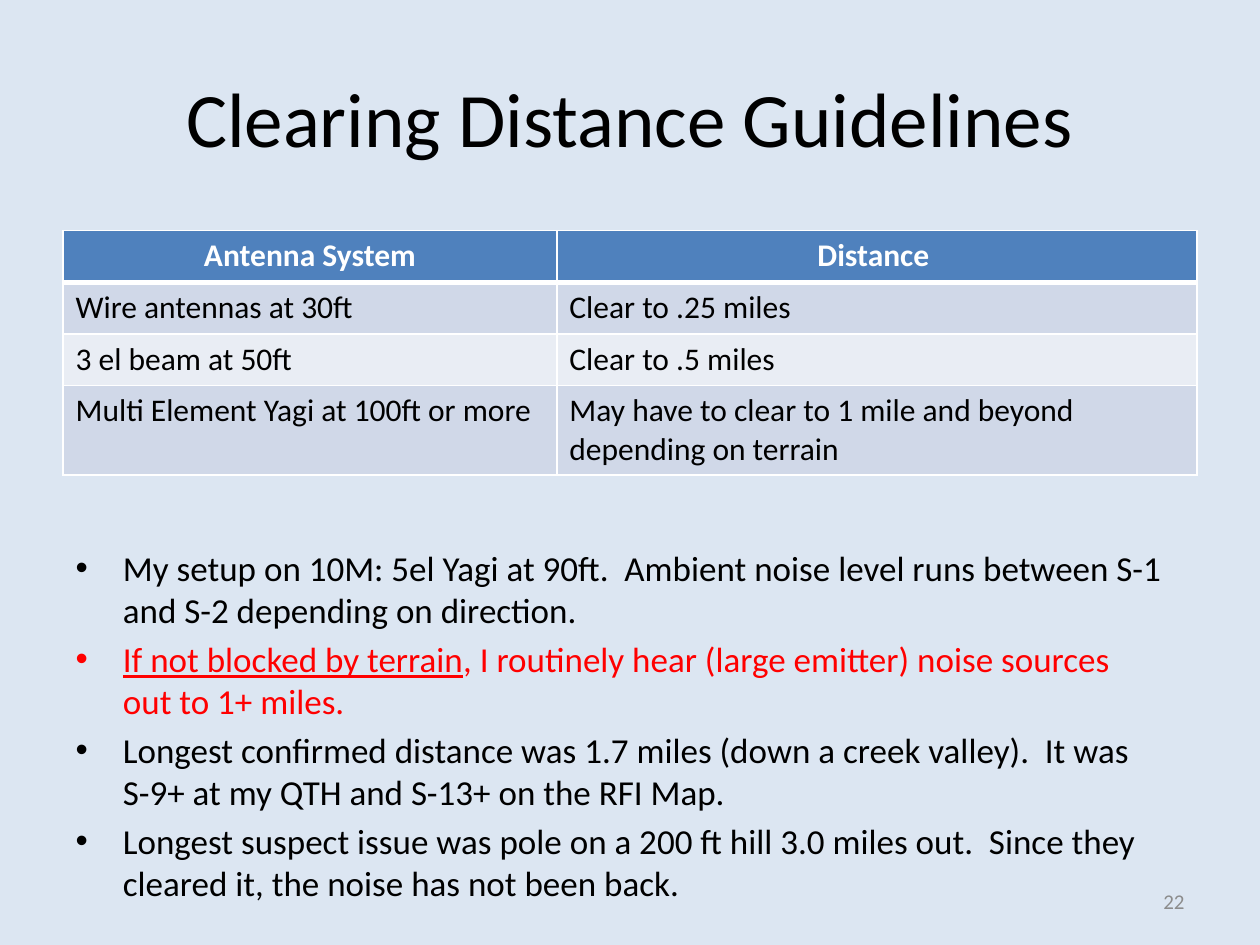
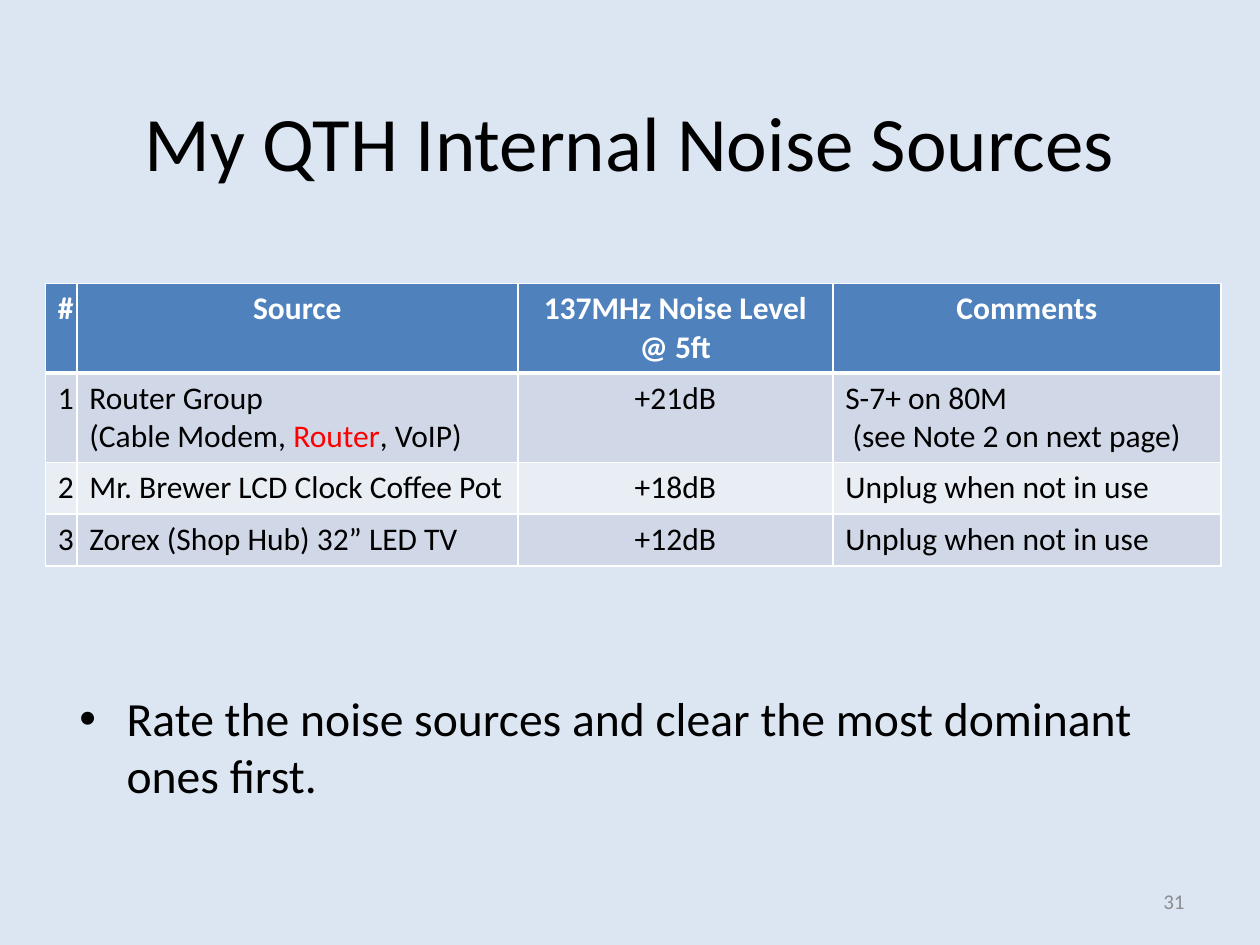
"""Build two slides on antenna noise: distance guidelines and home noise sources."""
from typing import Any, NamedTuple, Union

from lxml.etree import SubElement
from pptx import Presentation
from pptx.dml.color import RGBColor
from pptx.enum.text import MSO_ANCHOR, MSO_AUTO_SIZE, PP_ALIGN
from pptx.oxml.ns import qn
from pptx.util import Inches, Pt

PALE = RGBColor(0xDC, 0xE6, 0xF2)
BLUE = RGBColor(0x4F, 0x81, 0xBD)
BANDS = (RGBColor(0xD0, 0xD8, 0xE8), RGBColor(0xE9, 0xED, 0xF4))
WHITE = RGBColor(0xFF, 0xFF, 0xFF)
BLACK = RGBColor(0x00, 0x00, 0x00)
RED = RGBColor(0xFF, 0x00, 0x00)
GREY = RGBColor(0x8C, 0x8C, 0x8C)
FACE = "Calibri"
ROW = 0.41
LEFT, MID, RIGHT = PP_ALIGN.LEFT, PP_ALIGN.CENTER, PP_ALIGN.RIGHT


class Run(NamedTuple):
    text: str
    ink: RGBColor = BLACK
    line: bool = False


Line = Union[str, tuple[Run, ...]]
Cell = Union[str, list[Line]]


class Box(NamedTuple):
    left: float
    top: float
    width: float
    height: float


class Grid(NamedTuple):
    left: float
    top: float
    widths: tuple[float, ...]
    aligns: tuple[PP_ALIGN, ...]
    rows: list[tuple[Cell, ...]]


class Page(NamedTuple):
    title: str
    head: Box
    grid: Grid
    points: list[Line]
    body: Box
    size: float
    number: str


PAGES = [
    Page(
        "Clearing Distance Guidelines", Box(0.5, 0.3, 9, 1.25),
        Grid(0.5, 1.83, (3.92, 5.08), (LEFT, LEFT), [
            ("Antenna System", "Distance "),
            ("Wire antennas at 30ft", "Clear to .25 miles"),
            ("3 el beam at 50ft", "Clear to .5 miles"),
            ("Multi Element Yagi at 100ft or more",
             "May have to clear to 1 mile and beyond depending on terrain"),
        ]),
        ["My setup on 10M: 5el Yagi at 90ft.  Ambient noise level runs "
         "between S-1 and S-2 depending on direction.",
         (Run("If not blocked by terrain", RED, True),
          Run(", I routinely hear (large emitter) noise sources out to "
              "1+ miles.", RED)),
         "Longest confirmed distance was 1.7 miles (down a creek valley).  "
         "It was S-9+ at my QTH and S-13+ on the RFI Map.",
         "Longest suspect issue was pole on a 200 ft hill 3.0 miles out.  "
         "Since they cleared it, the noise has not been back."],
        Box(0.5, 4.29, 8.83, 2.54), 20, "22",
    ),
    Page(
        "My QTH Internal Noise Sources", Box(0.5, 0.58, 9, 1.08),
        Grid(0.36, 2.25, (0.25, 3.5, 2.5, 3.08), (MID, LEFT, MID, LEFT), [
            ("#", "Source", "137MHz Noise Level @ 5ft", "Comments"),
            ("1", ["Router Group",
                   (Run("(Cable Modem, "), Run("Router", RED),
                    Run(", VoIP)"))],
             "+21dB", ["S-7+ on 80M", " (see Note 2 on next page)"]),
            ("2", "Mr. Brewer LCD Clock Coffee Pot", "+18dB",
             "Unplug when not in use"),
            ("3", "Zorex (Shop Hub) 32” LED TV", "+12dB",
             "Unplug when not in use"),
        ]),
        ["Rate the noise sources and clear the most dominant ones first."],
        Box(0.53, 5.42, 9, 0.83), 27.2, "31",
    ),
]


def assign(item: Any, **values: Any) -> None:
    """Set each named value on the item."""
    for name, value in values.items():
        setattr(item, name, value)


def place(shape: Any, box: Box) -> None:
    """Move and size a shape."""
    assign(shape, **{name: Inches(value)
                     for name, value in box._asdict().items()})


def write(frame: Any, lines: list[Line], size: float, ink: RGBColor = BLACK,
          bold: bool = False, **form: Any) -> None:
    """Fill a text frame with one paragraph for each line."""
    for index, line in enumerate(lines):
        para = frame.paragraphs[0] if index == 0 else frame.add_paragraph()
        assign(para, **form)
        if index == 0:
            para.space_before = Pt(0)
        for part in (Run(line, ink),) if isinstance(line, str) else line:
            run = para.add_run()
            run.text = part.text
            assign(run.font, name=FACE, size=Pt(size), bold=bold,
                   underline=part.line)
            run.font.color.rgb = part.ink


def edge(cell: Any, tops: float, base: float) -> None:
    """Give a cell white borders, with its own top and bottom widths."""
    props = cell._tc.get_or_add_tcPr()
    for side, width in dict(L=1, R=1, T=tops, B=base).items():
        line = SubElement(props, qn(f"a:ln{side}"), w=str(Pt(width)))
        fill = SubElement(line, qn("a:solidFill"))
        SubElement(fill, qn("a:srgbClr"), val=str(WHITE))


def tabulate(slide: Any, grid: Grid) -> None:
    """Draw the table with a header row and banded rows."""
    count = len(grid.rows)
    table = slide.shapes.add_table(
        count, len(grid.widths), Inches(grid.left), Inches(grid.top),
        Inches(sum(grid.widths)), Inches(ROW * count)).table
    for col, width in zip(table.columns, grid.widths):
        col.width = Inches(width)
    for r, row in enumerate(grid.rows):
        head = r == 0
        table.rows[r].height = Inches(ROW)
        for c, value in enumerate(row):
            cell = table.cell(r, c)
            edge(cell, 3 if r == 1 else 1, 3 if head else 1)
            cell.fill.solid()
            cell.fill.fore_color.rgb = BLUE if head else BANDS[(r - 1) % 2]
            lines = [value] if isinstance(value, str) else value
            write(cell.text_frame, lines, 18, WHITE if head else BLACK, head,
                  alignment=MID if head else grid.aligns[c])


def draw(deck: Any, page: Page) -> None:
    """Add one slide with title, table, list and page number."""
    slide = deck.slides.add_slide(deck.slide_layouts[1])
    title, body = slide.shapes.title, slide.placeholders[1]
    place(title, page.head)
    assign(title.text_frame, vertical_anchor=MSO_ANCHOR.MIDDLE,
           auto_size=MSO_AUTO_SIZE.NONE)
    write(title.text_frame, [page.title], 44, alignment=MID)
    tabulate(slide, page.grid)
    place(body, page.body)
    body.text_frame.auto_size = MSO_AUTO_SIZE.NONE
    write(body.text_frame, page.points, page.size,
          space_before=Pt(page.size * 0.2))
    note = slide.shapes.add_textbox(
        *map(Inches, Box(7.17, 6.95, 2.33, 0.4))).text_frame
    assign(note, word_wrap=True, vertical_anchor=MSO_ANCHOR.MIDDLE)
    write(note, [page.number], 12, GREY, alignment=RIGHT)


def main() -> None:
    """Build and save the deck."""
    deck = Presentation()
    assign(deck, slide_width=Inches(10), slide_height=Inches(7.5))
    back = deck.slide_master.background.fill
    back.solid()
    back.fore_color.rgb = PALE
    for page in PAGES:
        draw(deck, page)
    deck.save("out.pptx")


if __name__ == "__main__":
    main()
